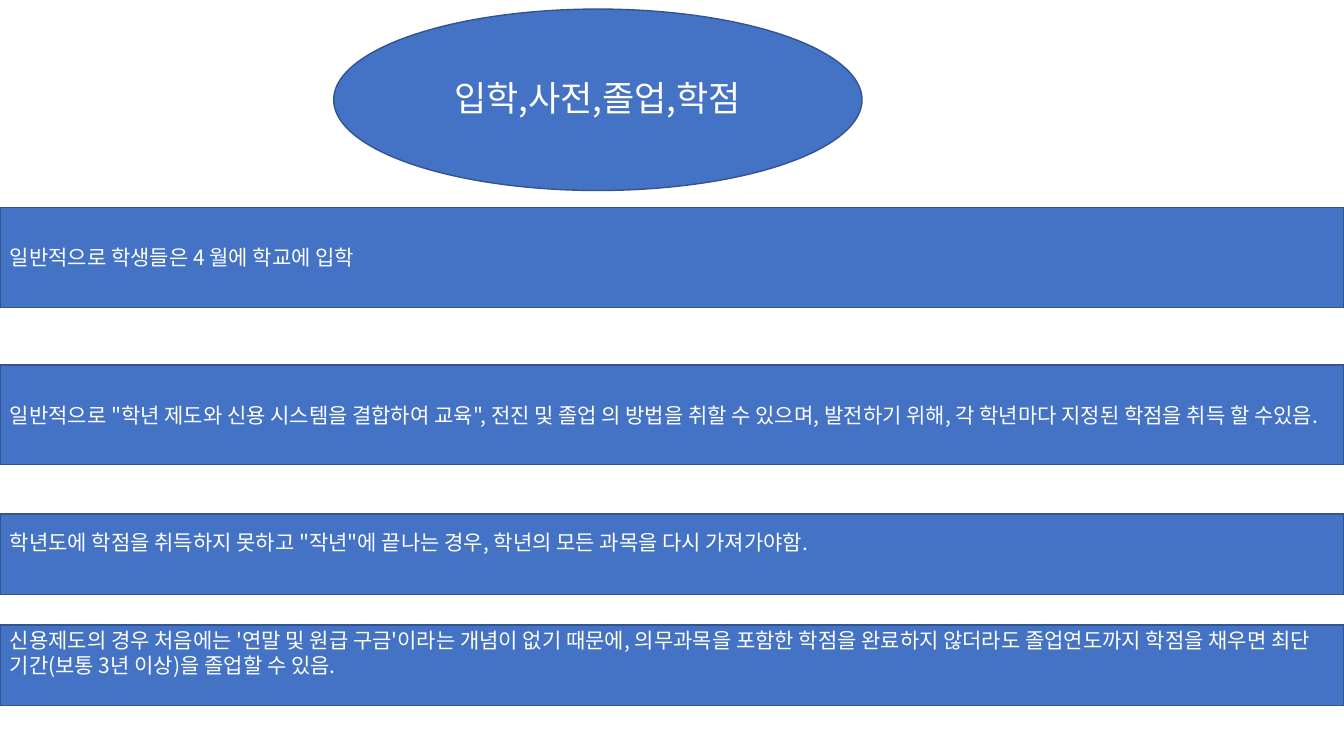
from lxml import etree
from pptx import Presentation
from pptx.dml.color import RGBColor
from pptx.enum import shapes, text
from pptx.oxml import ns
from pptx.util import Inches, Pt


def color(code):
    return RGBColor.from_string(code)


class Deck:
    font = "Noto Sans CJK KR"
    fill, edge, ink = "4472C4", "325491", "FFFFFF"

    def __init__(self, slide):
        self.slide = slide

    def shape(self, kind, left, top, width, height):
        item = self.slide.shapes.add_shape(
            kind, Inches(left), Inches(top), Inches(width), Inches(height))
        item.shadow.inherit = False
        item.fill.solid()
        item.fill.fore_color.rgb = color(self.fill)
        item.line.color.rgb = color(self.edge)
        item.line.width = Pt(1)
        frame = item.text_frame
        frame.word_wrap = True
        frame.vertical_anchor = text.MSO_ANCHOR.MIDDLE
        return frame

    def label(self, para, words, size, align):
        para.alignment = align
        run = para.add_run()
        run.text = words
        run.font.name = self.font
        run.font.size = Pt(size)
        run.font.color.rgb = color(self.ink)
        # Hangul takes the East Asian typeface
        props = run._r.get_or_add_rPr()
        etree.SubElement(props, ns.qn("a:ea")).set("typeface", self.font)

    def title(self, words):
        frame = self.shape(shapes.MSO_SHAPE.OVAL, 3.31, 0.09, 5.24, 1.8)
        para = frame.paragraphs[0]
        para.line_spacing = 0.9
        para.space_before = Pt(10)
        self.label(para, words, 25, text.PP_ALIGN.CENTER)

    def bar(self, top, height, inset, words):
        frame = self.shape(shapes.MSO_SHAPE.RECTANGLE, 0, top, 13.33, height)
        frame.margin_top, frame.margin_bottom = map(Inches, inset)
        self.label(frame.paragraphs[0], words, 15, text.PP_ALIGN.LEFT)


def main():
    show = Presentation()
    show.slide_width, show.slide_height = Inches(13.33), Inches(7.5)
    deck = Deck(show.slides.add_slide(show.slide_layouts[6]))

    # Topic
    deck.title("입학,사전,졸업,학점")

    # Rules, one bar each; the lower two sit high in their bars
    even, high = (0.05, 0.05), (0.02, 0.27)
    bars = [
        (2.06, 0.99, even, "일반적으로 학생들은 4 월에 학교에 입학"),
        (3.62, 0.99, even,
         "일반적으로 \"학년 제도와 신용 시스템을 결합하여 교육\", "
         "전진 및 졸업 의 방법을 취할 수 있으며, 발전하기 위해, "
         "각 학년마다 지정된 학점을 취득 할 수있음."),
        (5.1, 0.8, high,
         "학년도에 학점을 취득하지 못하고 \"작년\"에 끝나는 경우, "
         "학년의 모든 과목을 다시 가져가야함."),
        (6.2, 0.8, high,
         "신용제도의 경우 처음에는 '연말 및 원급 구금'이라는 개념이 없기 때문에, "
         "의무과목을 포함한 학점을 완료하지 않더라도 졸업연도까지 학점을 채우면 "
         "최단 기간(보통 3년 이상)을 졸업할 수 있음."),
    ]
    for bar in bars:
        deck.bar(*bar)

    show.save("out.pptx")


if __name__ == "__main__":
    main()
